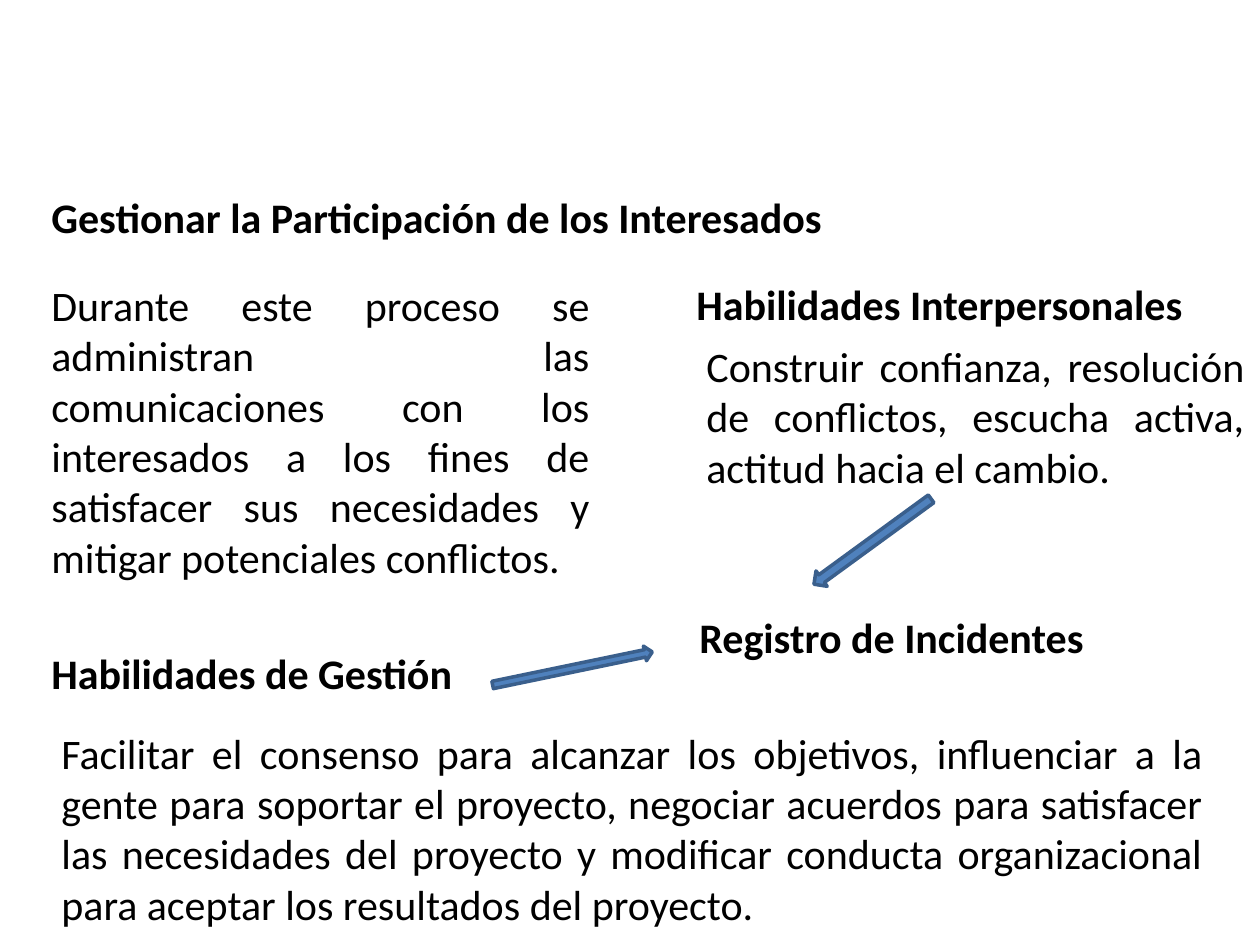
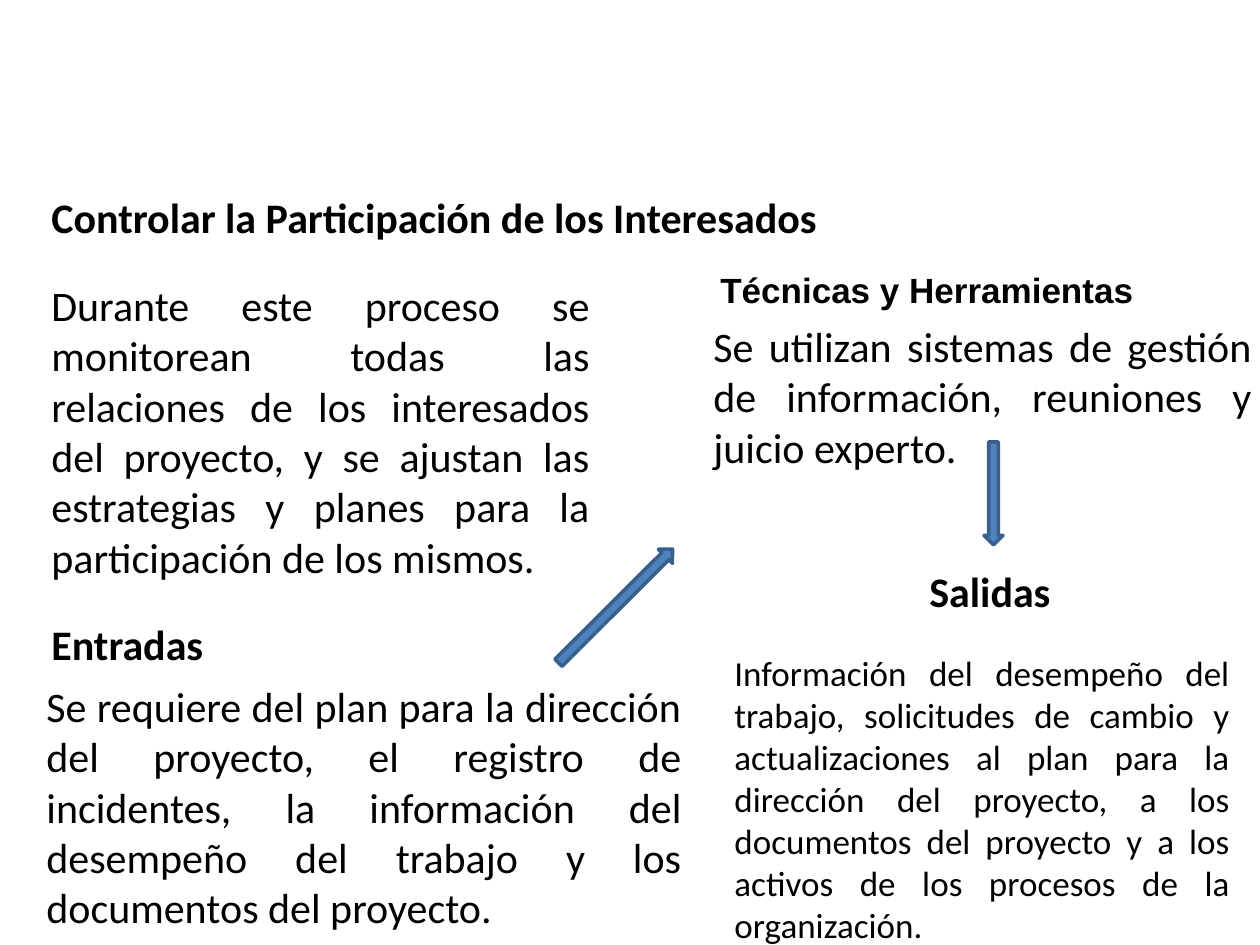
from pptx import Presentation
from pptx import util as u
from pptx.dml.color import RGBColor
from pptx.enum import shapes, text

PX = 914400 / 126
SLIDE_W, SLIDE_H = 1260, 945
MARGIN, TITLE_TOP, SUMMARY_TOP = 39, 185, 273
HEADING_W, HEADING_H = 1148, 64
COLUMN_W, BODY_H = 563, 513
BLACK, ARROW_FILL, ARROW_LINE = "000000", "4F81BD", "3A5F8C"


def px(length):
    """Turn a length in px into EMU."""
    return u.Emu(round(length * PX))


def color(code):
    """Turn a hex string into a colour."""
    return RGBColor.from_string(code)


def add_text(slide, words, left, top, width, height, size, font, bold=False):
    """Add a justified, wrapping text box and return its frame."""
    box = slide.shapes.add_textbox(px(left), px(top), px(width), px(height))
    frame = box.text_frame
    frame.word_wrap = True
    frame.text = words
    paragraph = frame.paragraphs[0]
    paragraph.alignment = text.PP_ALIGN.JUSTIFY
    run_font = paragraph.runs[0].font
    run_font.name, run_font.size, run_font.bold = font, u.Pt(size), bold
    run_font.color.rgb = color(BLACK)
    return frame


def add_heading(slide, words, left, top, size=24, font="Calibri"):
    """Add a bold one-line heading."""
    frame = add_text(slide, words, left, top, HEADING_W, HEADING_H, size, font, True)
    frame.auto_size = text.MSO_AUTO_SIZE.SHAPE_TO_FIT_TEXT


def add_body(slide, words, left, top, width=COLUMN_W, size=24):
    """Add a paragraph of running text."""
    add_text(slide, words, left, top, width, BODY_H, size, "Calibri")


def add_arrow(slide, left, top, width, height, angle):
    """Add a block arrow turned clockwise by an angle."""
    arrow = slide.shapes.add_shape(
        shapes.MSO_SHAPE.RIGHT_ARROW, px(left), px(top), px(width), px(height))
    arrow.rotation = angle
    arrow.shadow.inherit = False
    arrow.fill.solid()
    arrow.fill.fore_color.rgb = color(ARROW_FILL)
    arrow.line.color.rgb = color(ARROW_LINE)
    arrow.line.width = u.Pt(2)


def add_process_slide(deck, title, summary):
    """Add a blank slide with its process title and summary."""
    slide = deck.slides.add_slide(deck.slide_layouts[6])
    add_body(slide, summary, MARGIN, SUMMARY_TOP)
    add_heading(slide, title, MARGIN, TITLE_TOP)
    return slide


def build_manage_slide(deck):
    """Build the slide on managing stakeholder engagement."""
    slide = add_process_slide(
        deck, "Gestionar la Participación de los Interesados",
        "Durante este proceso se administran las comunicaciones con los interesados "
        "a los fines de satisfacer sus necesidades y mitigar potenciales conflictos.")
    add_heading(slide, "Habilidades Interpersonales", 684, 272)
    add_body(slide, "Construir confianza, resolución de conflictos, escucha activa, "
             "actitud hacia el cambio.", 694, 334)
    add_heading(slide, "Habilidades de Gestión", MARGIN, 641)
    add_body(slide, "Facilitar el consenso para alcanzar los objetivos, influenciar a "
             "la gente para soportar el proyecto, negociar acuerdos para satisfacer las "
             "necesidades del proyecto y modificar conducta organizacional para aceptar "
             "los resultados del proyecto.", 49, 721, width=1166)
    add_arrow(slide, 491, 661, 163, 15, 348.3)
    add_arrow(slide, 800, 532, 145, 19, 143.9)
    add_heading(slide, "Registro de Incidentes", 687, 605)


def build_control_slide(deck):
    """Build the slide on controlling stakeholder engagement."""
    slide = add_process_slide(
        deck, "Controlar la Participación de los Interesados",
        "Durante este proceso se monitorean todas las relaciones de los interesados "
        "del proyecto, y se ajustan las estrategias y planes para la participación "
        "de los mismos.")
    add_heading(slide, "Técnicas y Herramientas", 708, 262, size=20, font="Arial")
    add_body(slide, "Se utilizan sistemas de gestión de información, reuniones y "
             "juicio experto.", 701, 314)
    add_heading(slide, "Entradas", MARGIN, 612)
    add_body(slide, "Se requiere del plan para la dirección del proyecto, el registro "
             "de incidentes, la información del desempeño del trabajo y los documentos "
             "del proyecto.", 34, 674, width=660)
    add_arrow(slide, 535, 596, 161, 20, 315.1)
    add_arrow(slide, 942, 484, 103, 19, 90)
    add_heading(slide, "Salidas", 917, 559)
    add_body(slide, "Información del desempeño del trabajo, solicitudes de cambio y "
             "actualizaciones al plan para la dirección del proyecto, a los documentos "
             "del proyecto y a los activos de los procesos de la organización.",
             722, 645, width=520, size=20)


def main():
    """Build and save the deck."""
    deck = Presentation()
    deck.slide_width, deck.slide_height = px(SLIDE_W), px(SLIDE_H)
    build_manage_slide(deck)
    build_control_slide(deck)
    deck.save("out.pptx")


if __name__ == "__main__":
    main()
